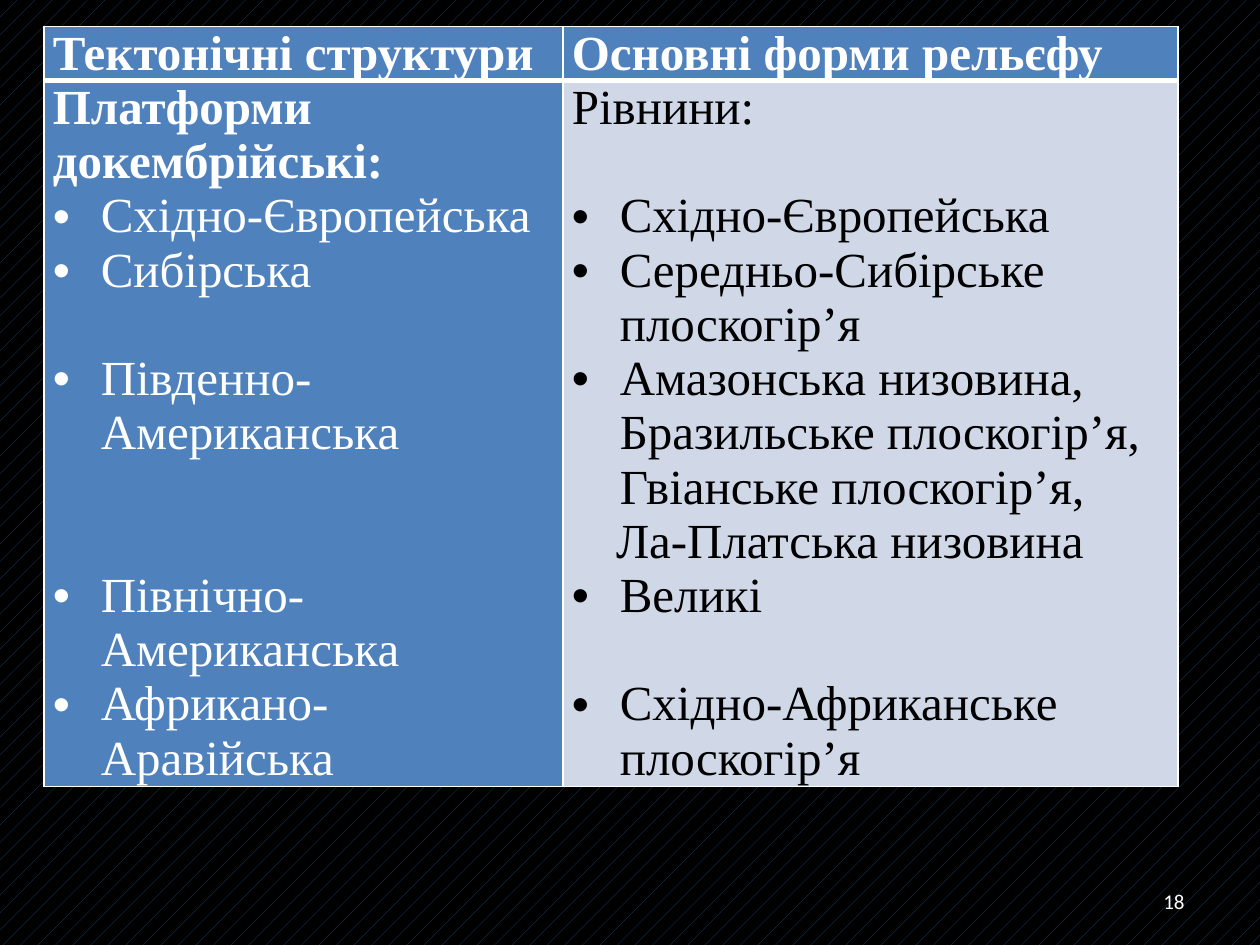
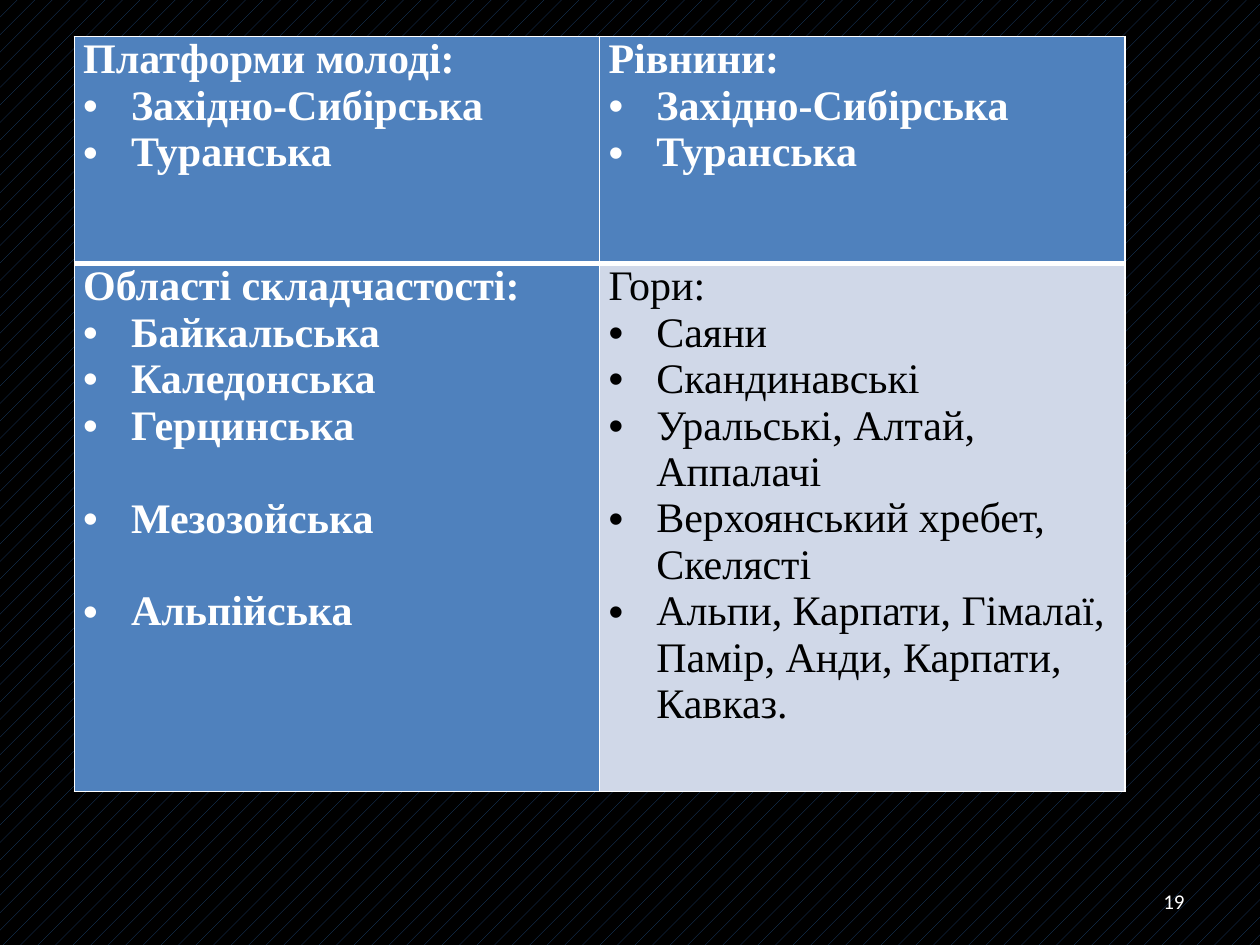
import pptx
import pptx.dml.color
import pptx.enum.dml
import pptx.enum.text
import pptx.oxml
import pptx.oxml.ns
import pptx.util
from lxml import etree

Inches = pptx.util.Inches
Pt = pptx.util.Pt

# Shared look
BLACK, WHITE, NAVY = "000000", "FFFFFF", "1F497D"
BLUE, PALE = "4F81BD", "D0D8E8"
TABLE_FONT, NUMBER_FONT = "Times New Roman", "Calibri"
LINE_SPACING = 1.107
INDENT = 0.38


def color(hex_string):
    return pptx.dml.color.RGBColor.from_string(hex_string)


def write(paragraph, text, font=TABLE_FONT, size=28, fill=WHITE, bold=False,
          bullet=False, indent=0, skipped_lines=0, align=None):
    run = paragraph.add_run()
    run.text = text
    run.font.name = font
    run.font.size = Pt(size)
    run.font.bold = bold
    run.font.color.rgb = color(fill)
    paragraph.alignment = align
    paragraph.space_before = Pt(round(skipped_lines * size * LINE_SPACING, 1))
    properties = paragraph._p.get_or_add_pPr()
    properties.set("marL", str(Inches(INDENT if bullet else indent)))
    properties.set("indent", str(Inches(-INDENT if bullet else 0)))
    if bullet:
        for tag, name, value in (("a:buFont", "typeface", "Arial"), ("a:buChar", "char", "•")):
            etree.SubElement(properties, pptx.oxml.ns.qn(tag)).set(name, value)


# Each cell: heading, heading bold, items bold, items as (text, lines skipped above)
tables = [
    dict(number="18", size=28, left=0.35, top=0.21, columns=[4.12, 4.88], rows=[0.43, 5.6], cells=[
        [("Тектонічні структури", True, True, []),
         ("Основні форми рельєфу", True, True, [])],
        [("Платформи докембрійські:", True, False, [
            ("Східно-Європейська", 0), ("Сибірська", 0), ("Південно-Американська", 1),
            ("Північно-Американська", 2), ("Африкано-Аравійська", 0)]),
         ("Рівнини:", False, False, [
             ("Східно-Європейська", 1), ("Середньо-Сибірське плоскогір’я", 0),
             ("Амазонська низовина, Бразильське плоскогір’я, Гвіанське плоскогір’я,", 0),
             ("Ла-Платська низовина", 0), ("Великі", 0), ("Східно-Африканське плоскогір’я", 1)])],
    ]),
    dict(number="19", size=24, left=0.59, top=0.29, columns=[4.17, 4.17], rows=[1.8, 4.19], cells=[
        [("Платформи молоді:", True, True, [("Західно-Сибірська", 0), ("Туранська", 0)]),
         ("Рівнини:", True, True, [("Західно-Сибірська", 0), ("Туранська", 0)])],
        [("Області складчастості:", True, True, [
            ("Байкальська", 0), ("Каледонська", 0), ("Герцинська", 0),
            ("Мезозойська", 1), ("Альпійська", 1)]),
         ("Гори:", False, False, [
             ("Саяни", 0), ("Скандинавські", 0), ("Уральські, Алтай, Аппалачі", 0),
             ("Верхоянський хребет, Скелясті", 0),
             ("Альпи, Карпати, Гімалаї, Памір, Анди, Карпати, Кавказ.", 0)])],
    ]),
]
UNBULLETED = "Ла-Платська низовина"

presentation = pptx.Presentation()
presentation.slide_width = Inches(10)
presentation.slide_height = Inches(7.5)

for content in tables:
    # Patterned background
    slide = presentation.slides.add_slide(presentation.slide_layouts[6])
    background = slide.background.fill
    background.patterned()
    background.pattern = pptx.enum.dml.MSO_PATTERN.PERCENT_5
    background.fore_color.rgb = color(NAVY)
    background.back_color.rgb = color(BLACK)

    # Table of structures and landforms
    columns, rows = content["columns"], content["rows"]
    table = slide.shapes.add_table(
        len(rows), len(columns), Inches(content["left"]), Inches(content["top"]),
        Inches(sum(columns)), Inches(sum(rows))).table
    table.first_row = table.horz_banding = False
    for column, width in zip(table.columns, columns):
        column.width = Inches(width)
    for row, height in zip(table.rows, rows):
        row.height = Inches(height)

    for row_index, row_cells in enumerate(content["cells"]):
        for column_index, (heading, heading_bold, items_bold, items) in enumerate(row_cells):
            cell = table.cell(row_index, column_index)
            cell.margin_left = cell.margin_right = Inches(0.07)
            cell.margin_top = cell.margin_bottom = 0

            # White borders, thick below the header row
            thick_side = "B" if row_index == 0 else "T"
            for side in "LRTB":
                width = Pt(3 if side == thick_side else 1)
                cell._tc.get_or_add_tcPr().append(pptx.oxml.parse_xml(
                    f'<a:ln{side} {pptx.oxml.ns.nsdecls("a")} w="{width}"><a:solidFill>'
                    f'<a:srgbClr val="{WHITE}"/></a:solidFill></a:ln{side}>'))
            is_pale = row_index == 1 and column_index == 1
            cell.fill.solid()
            cell.fill.fore_color.rgb = color(PALE if is_pale else BLUE)

            # Heading and list
            text_color = BLACK if is_pale else WHITE
            write(cell.text_frame.paragraphs[0], heading, size=content["size"],
                  fill=text_color, bold=heading_bold)
            for text, skipped_lines in items:
                write(cell.text_frame.add_paragraph(), text, size=content["size"],
                      fill=text_color, bold=items_bold, bullet=text != UNBULLETED,
                      indent=0.35, skipped_lines=skipped_lines)

    # Slide number
    number_box = slide.shapes.add_textbox(Inches(7.17), Inches(6.95), Inches(2.33), Inches(0.4))
    number_box.text_frame.word_wrap = True
    number_box.text_frame.vertical_anchor = pptx.enum.text.MSO_ANCHOR.MIDDLE
    write(number_box.text_frame.paragraphs[0], content["number"], font=NUMBER_FONT,
          size=12, align=pptx.enum.text.PP_ALIGN.RIGHT)

presentation.save("out.pptx")
